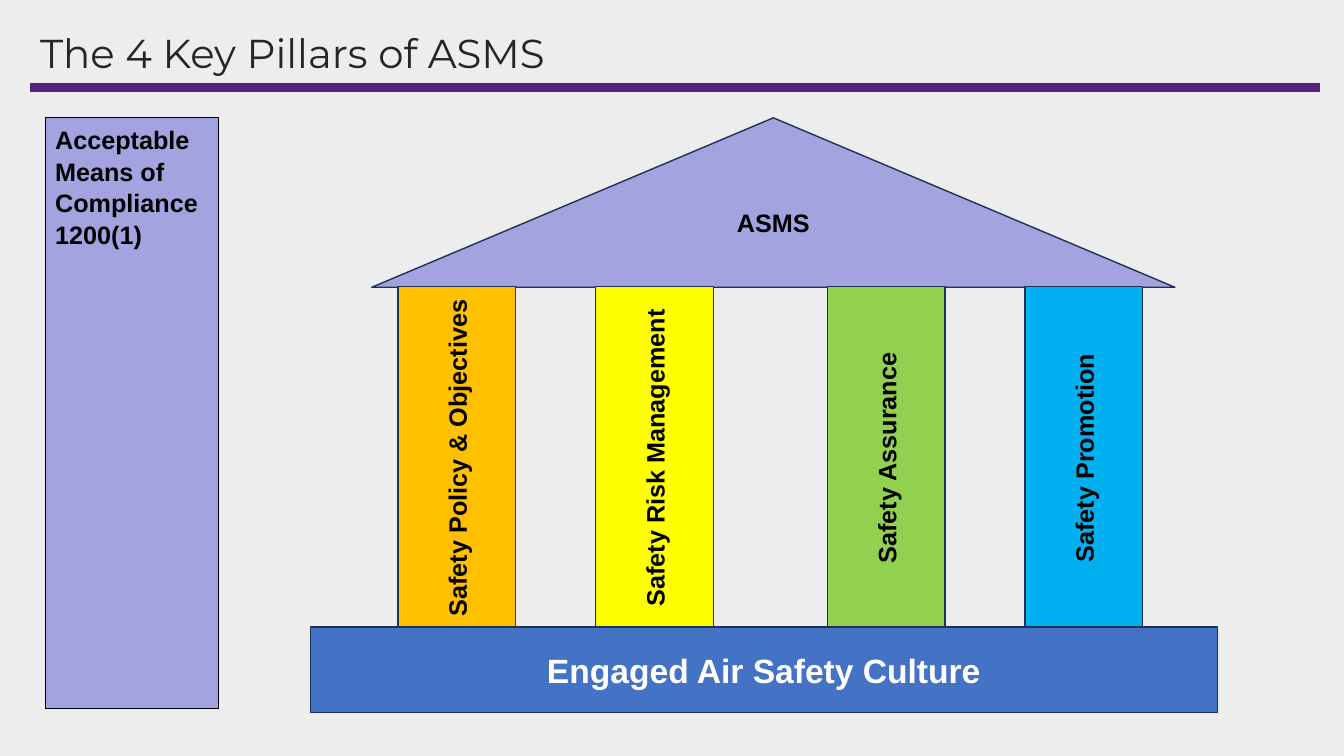
"""Build the slide of the four pillars that carry the ASMS roof."""
from dataclasses import dataclass

from lxml import etree
from pptx import Presentation
from pptx.dml.color import RGBColor
from pptx.enum.shapes import MSO_CONNECTOR, MSO_SHAPE
from pptx.enum.text import MSO_ANCHOR, PP_ALIGN
from pptx.oxml.ns import qn
from pptx.shapes.autoshape import Shape
from pptx.shapes.shapetree import GroupShapes, SlideShapes
from pptx.slide import Slide
from pptx.util import Cm, Pt

RECT = MSO_SHAPE.RECTANGLE
ROOF = MSO_SHAPE.ISOSCELES_TRIANGLE
LINE = MSO_CONNECTOR.STRAIGHT
TOP, MID = MSO_ANCHOR.TOP, MSO_ANCHOR.MIDDLE
LEFT, MIDDLE = PP_ALIGN.LEFT, PP_ALIGN.CENTER

LILAC, NAVY, BLACK = "A3A3E0", "1E3256", "000000"
PILLARS = (
    ("Safety Policy & Objectives", "FFC000"),
    ("Safety Risk Management", "FFFF00"),
    ("Safety Assurance", "92D050"),
    ("Safety Promotion", "00B0F0"),
)
PAIRS = (10.03, 20.85)
STEP = 4.98


@dataclass
class Block:
    text: str
    left: float
    top: float
    width: float
    height: float
    fill: str
    form: MSO_SHAPE = RECT
    edge: str = NAVY
    weight: float = 1
    size: float = 18
    ink: str = BLACK
    anchor: MSO_ANCHOR = MID
    align: PP_ALIGN = MIDDLE
    pitch: float = 1
    turned: bool = False


def color(code: str) -> RGBColor:
    """Turn a hex string into a colour."""
    return RGBColor.from_string(code)


def write(box: Shape, text: str, face: str, size: float, ink: str, bold: bool,
          anchor: MSO_ANCHOR, align: PP_ALIGN, pitch: float) -> None:
    """Put one styled run into a shape."""
    frame = box.text_frame
    frame.word_wrap = True
    frame.vertical_anchor = anchor
    para = frame.paragraphs[0]
    para.alignment = align
    para.line_spacing = pitch
    run = para.add_run()
    run.text = text
    font = run.font
    font.name, font.size, font.bold = face, Pt(size), bold
    font.color.rgb = color(ink)


def draw(shapes: SlideShapes | GroupShapes, block: Block) -> None:
    """Draw one filled block with its label."""
    box = shapes.add_shape(block.form, Cm(block.left), Cm(block.top),
                           Cm(block.width), Cm(block.height))
    box.shadow.inherit = False
    box.fill.solid()
    box.fill.fore_color.rgb = color(block.fill)
    box.line.color.rgb = color(block.edge)
    box.line.width = Pt(block.weight)
    write(box, block.text, "Arial", block.size, block.ink, True,
          block.anchor, block.align, block.pitch)
    if block.turned:
        box.element.txBody.find(qn("a:bodyPr")).set("vert", "vert270")


def head(slide: Slide) -> None:
    """Draw the rule and the title above it."""
    rule = slide.shapes.add_connector(LINE, Cm(0.76), Cm(2.21), Cm(33.27), Cm(2.21))
    rule.line.color.rgb = color("56227D")
    rule.line.width = Pt(6)
    etree.SubElement(rule.element.spPr, qn("a:effectLst"))
    title = slide.shapes.add_textbox(Cm(0.76), Cm(0.71), Cm(32.51), Cm(1.35))
    write(title, "The 4 Key Pillars of ASMS", "Montserrat", 28.8, "262626",
          False, MID, LEFT, 0.9)


def temple(slide: Slide) -> None:
    """Draw the roof, the pillars and the base as one group."""
    parts = slide.shapes.add_group_shape().shapes
    draw(parts, Block("ASMS", 9.37, 2.97, 20.24, 4.27, LILAC, ROOF, anchor=TOP))
    for i, (name, fill) in enumerate(PILLARS):
        left = PAIRS[i // 2] + i % 2 * STEP
        draw(parts, Block(name, left, 7.22, 2.97, 8.64, fill, turned=True))
    draw(parts, Block("Engaged Air Safety Culture", 7.82, 15.8, 22.86, 2.16,
                      "4472C4", size=24, ink="FFFFFF"))


def main() -> None:
    """Set up the deck, draw the slide and save it."""
    deck = Presentation()
    deck.slide_width, deck.slide_height = Cm(33.87), Cm(19.05)
    slide = deck.slides.add_slide(deck.slide_layouts[6])
    slide.background.fill.solid()
    slide.background.fill.fore_color.rgb = color("EDEDED")
    head(slide)
    temple(slide)
    draw(slide.shapes, Block("Acceptable Means of Compliance 1200(1)",
                             1.14, 2.97, 4.37, 14.88, LILAC, edge=BLACK,
                             weight=0.75, anchor=TOP, align=LEFT, pitch=1.05))
    deck.save("out.pptx")


if __name__ == "__main__":
    main()
